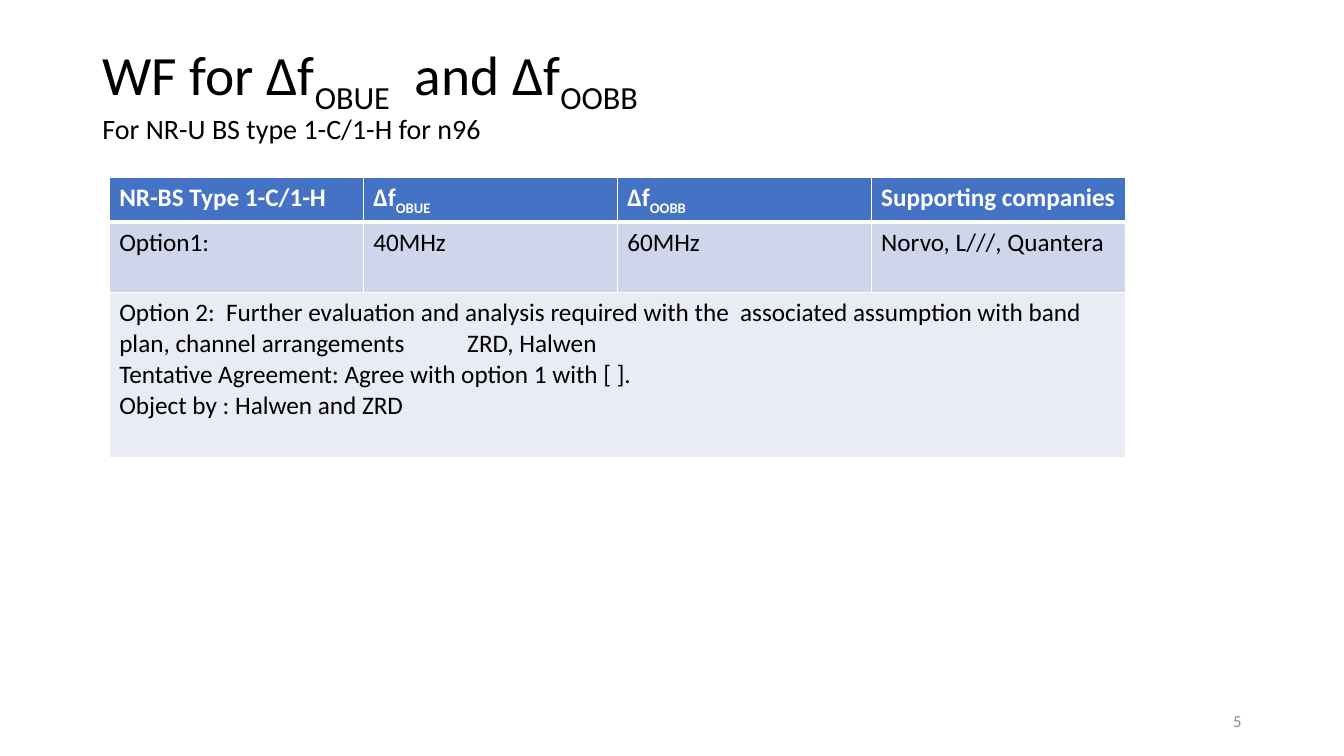
"""Builds the slide on the ΔfOBUE and ΔfOOBB way forward for n96."""
from dataclasses import dataclass
from typing import Any, NamedTuple

from lxml.etree import SubElement
from pptx import Presentation
from pptx.dml.color import RGBColor as Rgb
from pptx.enum.text import MSO_ANCHOR as Anchor, MSO_AUTO_SIZE as AutoSize, PP_ALIGN as Align
from pptx.oxml.ns import qn
from pptx.util import Pt


@dataclass(frozen=True)
class Theme:
    font: str = "Calibri"
    ink: str = "000000"
    white: str = "FFFFFF"
    muted: str = "8C8C8C"
    header: str = "4472C4"
    band_dark: str = "CFD5EA"
    band_light: str = "E9EBF5"
    title_size: float = 39.6
    subtitle_size: float = 20
    table_size: float = 18
    number_size: float = 12


class Piece(NamedTuple):
    text: str
    subscript: bool = False


class Box(NamedTuple):
    left: float
    top: float
    width: float
    height: float


Line = tuple[Piece, ...]


@dataclass(frozen=True)
class TextStyle:
    size: float
    color: str
    bold: bool = False


@dataclass(frozen=True)
class OptionRow:
    height: float
    fill: str
    style: TextStyle
    cells: tuple[tuple[Line, ...], ...]
    top_border: float = 1
    bottom_border: float = 1


THEME = Theme()
COLUMN_COUNT = 4
COLUMN_WIDTH = 181.44
COMPANY_TAB = 248.5
DELTA_OBUE: Line = (Piece("Δf"), Piece("OBUE", True))
DELTA_OOBB: Line = (Piece("Δf"), Piece("OOBB", True))
TITLE: Line = (Piece("WF for Δf"), Piece("OBUE", True), Piece("  and Δf"), Piece("OOBB", True))
HEADER_STYLE = TextStyle(THEME.table_size, THEME.white, True)
OPTION_STYLE = TextStyle(THEME.table_size, THEME.ink)


def plain(*texts: str) -> tuple[Line, ...]:
    """Turn each text into a line without subscripts."""
    return tuple((Piece(text),) for text in texts)


ROWS = (
    OptionRow(31.5, THEME.header, HEADER_STYLE,
              (plain("NR-BS Type 1-C/1-H"), (DELTA_OBUE,), (DELTA_OOBB,),
               plain("Supporting companies")), bottom_border=3),
    OptionRow(50.5, THEME.band_dark, OPTION_STYLE,
              (plain("Option1:"), plain("40MHz"), plain("60MHz"),
               plain("Norvo, L///, Quantera")), top_border=3),
    OptionRow(118, THEME.band_light, OPTION_STYLE,
              (plain("Option 2:  Further evaluation and analysis required with the  associated "
                     "assumption with band plan, channel arrangements\tZRD, Halwen",
                     "Tentative Agreement: Agree with option 1 with [ ].",
                     "Object by : Halwen and ZRD"),)),
)


def apply(target: Any, values: dict[str, Any]) -> None:
    """Set every named attribute on the target."""
    for name, value in values.items():
        setattr(target, name, value)


def write_line(paragraph: Any, line: Line, style: TextStyle) -> None:
    """Write one line of pieces into a paragraph."""
    for piece in line:
        run = paragraph.add_run()
        run.text = piece.text
        apply(run.font, {"name": THEME.font, "size": Pt(style.size), "bold": style.bold})
        run.font.color.rgb = Rgb.from_string(style.color)
        if piece.subscript:
            run._r.get_or_add_rPr().set("baseline", "-25000")


def place(shape: Any, box: Box, anchor: Anchor) -> Any:
    """Position a text shape and return its first paragraph."""
    apply(shape, {name: Pt(value) for name, value in box._asdict().items()})
    frame = shape.text_frame
    apply(frame, {"word_wrap": True, "auto_size": AutoSize.NONE, "vertical_anchor": anchor})
    return frame.paragraphs[0]


def add_border(cell: Any, side: str, width: float) -> None:
    """Draw one white cell border."""
    border = SubElement(cell._tc.get_or_add_tcPr(), qn(f"a:{side}"), w=str(Pt(width)))
    fill = SubElement(border, qn("a:solidFill"))
    SubElement(fill, qn("a:srgbClr"), val=THEME.white)


def add_tab(paragraph: Any, position: float) -> None:
    """Add a left tab stop to a paragraph."""
    stops = SubElement(paragraph._p.get_or_add_pPr(), qn("a:tabLst"))
    SubElement(stops, qn("a:tab"), pos=str(Pt(position)), algn="l")


def fill_cell(cell: Any, lines: tuple[Line, ...], style: TextStyle) -> None:
    """Write the lines of a table cell."""
    for index, line in enumerate(lines):
        paragraph = cell.text_frame.add_paragraph() if index else cell.text_frame.paragraphs[0]
        if any("\t" in piece.text for piece in line):
            add_tab(paragraph, COMPANY_TAB)
        write_line(paragraph, line, style)


def add_options_table(slide: Any, left: float, top: float) -> None:
    """Add the table of options with its borders and fills."""
    options = slide.shapes.add_table(
        len(ROWS), COLUMN_COUNT, Pt(left), Pt(top), Pt(COLUMN_WIDTH * COLUMN_COUNT),
        Pt(sum(row.height for row in ROWS))).table
    for column in options.columns:
        column.width = Pt(COLUMN_WIDTH)
    for index, row in enumerate(ROWS):
        options.rows[index].height = Pt(row.height)
        borders = {"lnL": 1, "lnR": 1, "lnT": row.top_border, "lnB": row.bottom_border}
        for number in range(COLUMN_COUNT):
            cell = options.cell(index, number)
            for side, width in borders.items():
                add_border(cell, side, width)
            cell.fill.solid()
            cell.fill.fore_color.rgb = Rgb.from_string(row.fill)
        if len(row.cells) == 1:
            options.cell(index, 0).merge(options.cell(index, COLUMN_COUNT - 1))
        for number, lines in enumerate(row.cells):
            fill_cell(options.cell(index, number), lines, row.style)


def main() -> None:
    """Build and save the slide."""
    deck = Presentation()
    apply(deck, {"slide_width": Pt(960), "slide_height": Pt(540)})
    slide = deck.slides.add_slide(deck.slide_layouts[1])

    heading = place(slide.shapes.title, Box(66, 28, 828, 51), Anchor.MIDDLE)
    apply(heading, {"alignment": Align.LEFT, "line_spacing": 0.9})
    write_line(heading, TITLE, TextStyle(THEME.title_size, THEME.ink))

    scope = place(slide.placeholders[1], Box(66, 79, 828, 423.5), Anchor.TOP)
    scope_format = scope._p.get_or_add_pPr()
    for name in ("marL", "indent"):
        scope_format.set(name, "0")
    SubElement(scope_format, qn("a:buNone"))
    apply(scope, {"line_spacing": 0.9, "space_before": Pt(0)})
    write_line(scope, (Piece("For NR-U BS type 1-C/1-H for n96"),),
               TextStyle(THEME.subtitle_size, THEME.ink))

    number_box = Box(678, 500.5, 216, 28.75)
    page_number = place(slide.shapes.add_textbox(*map(Pt, number_box)), number_box, Anchor.MIDDLE)
    page_number.alignment = Align.RIGHT
    write_line(page_number, (Piece("5"),), TextStyle(THEME.number_size, THEME.muted))

    add_options_table(slide, 78, 127)
    deck.save("out.pptx")


if __name__ == "__main__":
    main()
